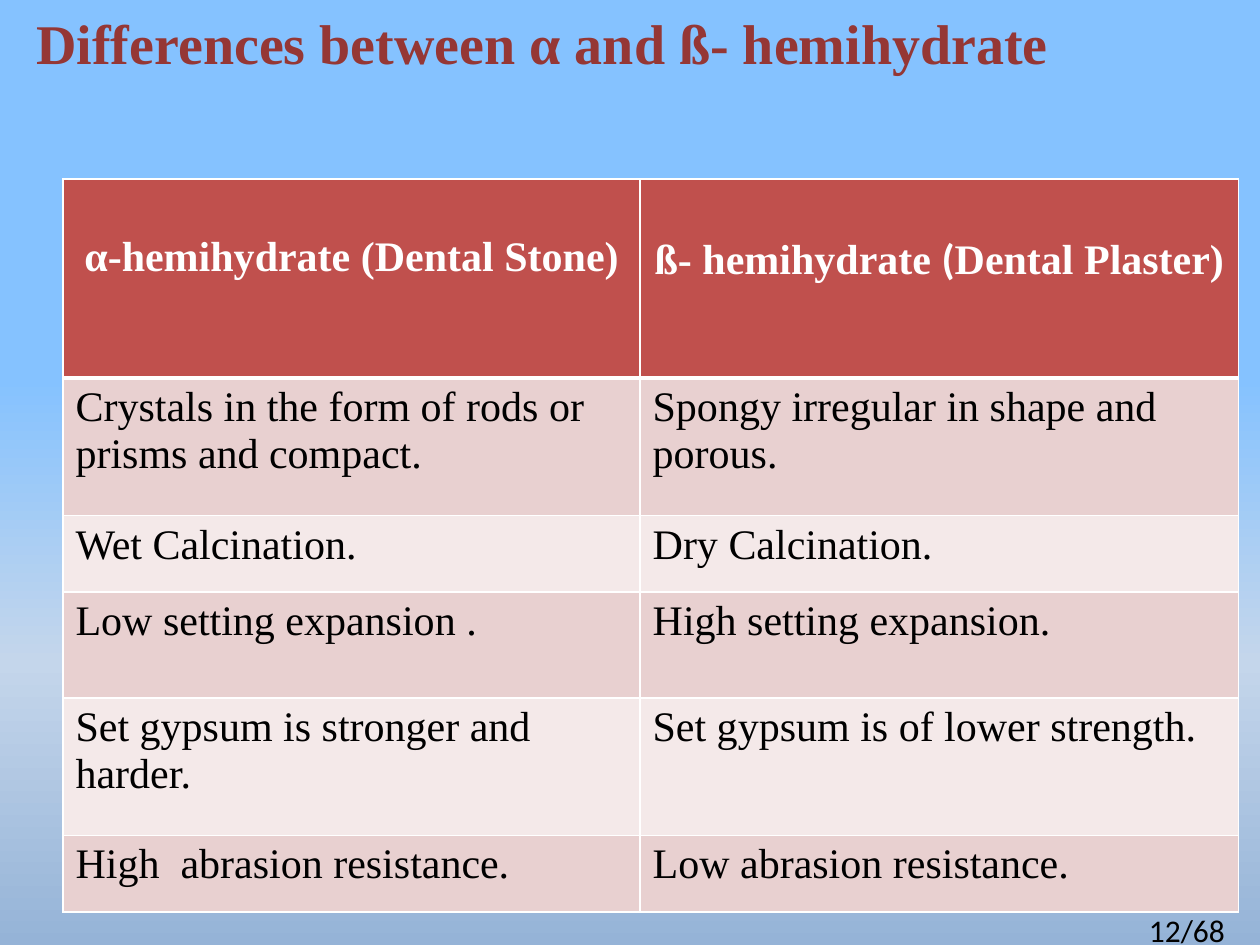
"""Build a slide with a table comparing alpha and beta hemihydrate."""
from copy import deepcopy

from lxml.etree import SubElement
from pptx import Presentation
from pptx.dml.color import RGBColor
from pptx.enum.text import PP_ALIGN
from pptx.oxml import parse_xml
from pptx.oxml.ns import nsdecls, qn
from pptx.util import Inches, Pt

SERIF, SANS = "Times New Roman", "Calibri"
COLORS = {
    "title": "953735", "text": "000000", "header": "C0504D", "border": "FFFFFF",
    "header_text": "FFFFFF", "odd_row": "E8D0D0", "even_row": "F4E9E9",
}
BACKGROUND_STOPS = [(0.4, "85C2FF"), (0.7, "C4D6EB"), (1, "95B3D7")]

TITLE = "Differences between α and ß- hemihydrate"
PAGE_NUMBER = "12/68"
HEADERS = [
    [("α-hemihydrate (Dental Stone)", SERIF)],
    [("ß- hemihydrate ", SERIF), ("(", SANS), ("Dental Plaster)", SERIF)],
]
ROWS = [
    ("Crystals in the form of rods or prisms and compact.", "Spongy irregular in shape and porous."),
    ("Wet Calcination.", "Dry Calcination."),
    ("Low setting expansion .", "High setting expansion."),
    ("Set gypsum is stronger and harder.", "Set gypsum is of lower strength."),
    ("High  abrasion resistance.", "Low abrasion resistance."),
]
SLIDE_SIZE = (10, 7.5)
TABLE_ORIGIN = (0.5, 1.42)
COLUMN_WIDTHS = [4.58, 4.75]
ROW_HEIGHTS = [1.58, 1.09, 0.61, 0.84, 1.09, 0.61]
HEADER_MARGIN_TOP = 0.44

FORMATS = {
    "title": {"size": Pt(32), "bold": True, "name": SERIF},
    "header": {"size": Pt(24), "bold": True},
    "body": {"size": Pt(24), "bold": False, "name": SERIF},
    "page": {"size": Pt(18), "name": SANS},
}


def add_run(paragraph, text, style, color, **changes):
    run = paragraph.add_run()
    run.text = text
    for name, value in {**FORMATS[style], **changes}.items():
        setattr(run.font, name, value)
    run.font.color.rgb = RGBColor.from_string(COLORS[color])


def add_text(slide, box, text, style, color, wrap):
    frame = slide.shapes.add_textbox(*map(Inches, box)).text_frame
    frame.word_wrap = wrap
    add_run(frame.paragraphs[0], text, style, color)
    return frame.paragraphs[0]


def paint_background(slide):
    fill = slide.background.fill
    fill.gradient()
    fill.gradient_angle = 270
    first = fill.gradient_stops[0]._gs
    first.addnext(deepcopy(first))
    for stop, (position, color) in zip(fill.gradient_stops, BACKGROUND_STOPS):
        stop.position = position
        stop.color.rgb = RGBColor.from_string(color)


def set_borders(cell, widths):
    properties = cell._tc.get_or_add_tcPr()
    for index, (side, width) in enumerate(widths.items()):
        line = parse_xml(f'<a:ln{side} {nsdecls("a")} w="{Pt(width)}"/>')
        fill = SubElement(line, qn("a:solidFill"))
        SubElement(fill, qn("a:srgbClr"), val=COLORS["border"])
        properties.insert(index, line)


def add_comparison(slide):
    size = (sum(COLUMN_WIDTHS), sum(ROW_HEIGHTS))
    shape = slide.shapes.add_table(
        len(ROW_HEIGHTS), len(COLUMN_WIDTHS), *map(Inches, TABLE_ORIGIN + size))
    table = shape.table
    for column, width in zip(table.columns, COLUMN_WIDTHS):
        column.width = Inches(width)
    for row, height in zip(table.rows, ROW_HEIGHTS):
        row.height = Inches(height)
    content = [HEADERS] + [[[(text, SERIF)] for text in row] for row in ROWS]
    for row_index, row in enumerate(content):
        is_header = row_index == 0
        style, color = ("header", "header_text") if is_header else ("body", "text")
        band = "header" if is_header else ("even_row", "odd_row")[row_index % 2]
        for column_index, runs in enumerate(row):
            cell = table.cell(row_index, column_index)
            cell.fill.solid()
            cell.fill.fore_color.rgb = RGBColor.from_string(COLORS[band])
            set_borders(cell, {"L": 1, "R": 1, "T": 3 if row_index == 1 else 1,
                               "B": 3 if is_header else 1})
            paragraph = cell.text_frame.paragraphs[0]
            if is_header:
                cell.margin_top = Inches(HEADER_MARGIN_TOP)
                paragraph.alignment = PP_ALIGN.CENTER
            for text, font in runs:
                add_run(paragraph, text, style, color, name=font)


def main():
    presentation = Presentation()
    presentation.slide_width, presentation.slide_height = map(Inches, SLIDE_SIZE)
    slide = presentation.slides.add_slide(presentation.slide_layouts[6])
    paint_background(slide)
    title = add_text(slide, (0.19, 0.08, 9.6, 0.6), TITLE, "title", "title", True)
    title.line_spacing = 0.9
    add_comparison(slide)
    add_text(slide, (9.02, 7.18, 0.81, 0.4), PAGE_NUMBER, "page", "text", False)
    presentation.save("out.pptx")


if __name__ == "__main__":
    main()
